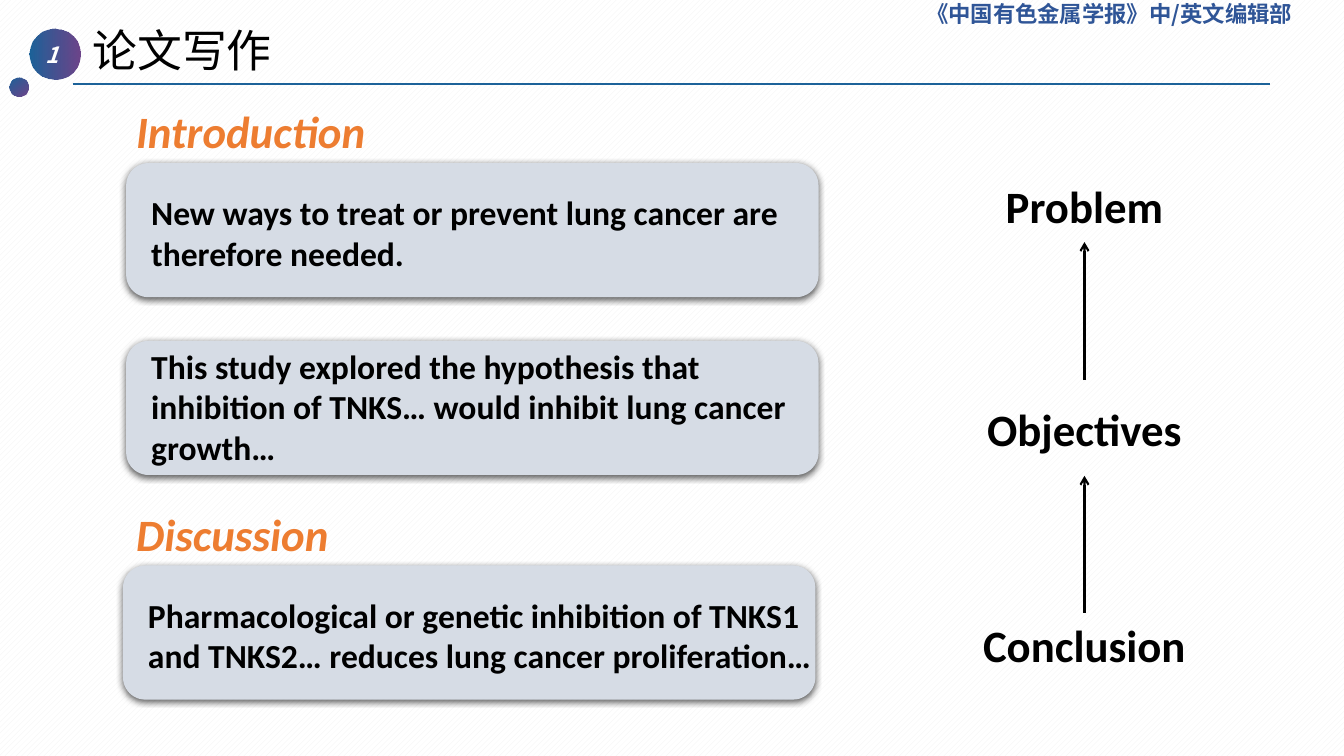
from dataclasses import dataclass

from lxml import etree
from pptx import Presentation
from pptx import util as u
from pptx.dml.color import RGBColor
from pptx.enum import dml, shapes, text
from pptx.oxml import ns, parse_xml


@dataclass(frozen=True)
class Theme:
    latin: str = "Calibri"
    cjk: str = "Noto Sans CJK SC"
    black: str = "000000"
    white: str = "FFFFFF"
    hatch: str = "F2F2F2"
    blue: str = "1C6299"
    purple: str = "5C307D"
    navy: str = "2F5597"
    orange: str = "ED7D31"
    card: str = "D6DCE5"
    large: int = 32
    body: int = 24
    small: int = 16


@dataclass(frozen=True)
class Box:
    left: float
    top: float
    width: float
    height: float

    def cm(self) -> tuple:
        return tuple(u.Cm(v) for v in (self.left, self.top, self.width, self.height))


@dataclass(frozen=True)
class Label:
    words: str
    box: Box
    size: int
    color: str
    font: str
    bold: bool = True
    italic: bool = False
    centered: bool = False


@dataclass(frozen=True)
class Card:
    words: str
    left: float
    top: float
    text_drop: float


@dataclass(frozen=True)
class Dot:
    left: float
    top: float
    size: float
    angle: int


@dataclass(frozen=True)
class Line:
    start: tuple[float, float]
    end: tuple[float, float]
    color: str
    width: float
    arrow: bool = False


T = Theme()
CARD_W, CARD_H = 17.45, 3.38
STAGE_X, STAGE_W = 27.33, 8
LABEL_H = 1.63

TITLE = Label("论文写作", Box(2.08, 0.46, 10, LABEL_H), T.large, T.black, T.cjk, bold=False)
NUMBER = Label("1", Box(0.38, 0.91, 1.88, 0.94), T.small, T.white, T.cjk,
               italic=True, centered=True)
JOURNAL = Label("《中国有色金属学报》中/英文编辑部", Box(23.09, -0.13, 10.7, 0.94),
                T.small, T.navy, T.cjk)
DOTS = [Dot(0.74, 0.71, 1.3, 0), Dot(0.25, 1.96, 0.48, 310)]
HEADINGS = [("Introduction", 2.49), ("Discussion", 12.65)]
CARDS = [
    Card("New ways to treat or prevent lung cancer are therefore needed.", 3.18, 4.11, 0.61),
    Card("This study explored the hypothesis that inhibition of TNKS… would inhibit "
         "lung cancer growth…", 3.18, 8.59, 0),
    Card("Pharmacological or genetic inhibition of TNKS1 and TNKS2… reduces lung cancer "
         "proliferation…", 3.1, 14.25, 0.61),
]
STAGES = [("Problem", 4.39), ("Objectives", 10.01), ("Conclusion", 15.44)]
LINES = [
    Line((1.83, 2.11), (32, 2.11), T.blue, 1.75),
    Line((STAGE_X, 15.44), (STAGE_X, 11.99), T.black, 1.5, arrow=True),
    Line((STAGE_X, 9.58), (STAGE_X, 6.1), T.black, 1.5, arrow=True),
]


def rgb(color: str) -> RGBColor:
    return RGBColor.from_string(color)


def add_label(parent, label: Label) -> None:
    tf = parent.add_textbox(*label.box.cm()).text_frame
    tf.word_wrap = True
    tf.auto_size = text.MSO_AUTO_SIZE.SHAPE_TO_FIT_TEXT
    p = tf.paragraphs[0]
    p.alignment = text.PP_ALIGN.CENTER if label.centered else text.PP_ALIGN.LEFT
    r = p.add_run()
    r.text = label.words
    f = r.font
    f.name, f.size = label.font, u.Pt(label.size)
    f.bold, f.italic = label.bold, label.italic
    f.color.rgb = rgb(label.color)
    ea = etree.SubElement(r._r.get_or_add_rPr(), ns.qn("a:ea"))
    ea.set("typeface", label.font)


def add_dot(parent, dot: Dot) -> None:
    box = Box(dot.left, dot.top, dot.size, dot.size)
    sp = parent.add_shape(shapes.MSO_SHAPE.OVAL, *box.cm())
    sp.shadow.inherit = False
    sp.line.fill.background()
    sp.fill.gradient()
    sp.fill.gradient_angle = dot.angle
    stops = sp.fill.gradient_stops
    for stop, position, color in zip(stops, (0, 1), (T.blue, T.purple)):
        stop.position = position
        stop.color.rgb = rgb(color)
    last_color = sp._element.spPr.findall(".//" + ns.qn("a:srgbClr"))[-1]
    etree.SubElement(last_color, ns.qn("a:alpha")).set("val", "90000")


def add_card(parent, card: Card) -> None:
    group = parent.add_group_shape().shapes
    box = Box(card.left, card.top, CARD_W, CARD_H)
    sp = group.add_shape(shapes.MSO_SHAPE.ROUNDED_RECTANGLE, *box.cm())
    sp.fill.solid()
    sp.fill.fore_color.rgb = rgb(T.card)
    sp.line.fill.background()
    sp._element.spPr.append(parse_xml(
        f'<a:effectLst {ns.nsdecls("a")}>'
        f'<a:outerShdw blurRad="{u.Pt(4.5)}" dist="{u.Pt(1.5)}" dir="5400000" '
        f'rotWithShape="0"><a:srgbClr val="{T.black}"><a:alpha val="63000"/>'
        '</a:srgbClr></a:outerShdw></a:effectLst>'))
    text_box = Box(card.left + 0.38, card.top + card.text_drop, 17.25, 2.31)
    add_label(group, Label(card.words, text_box, T.body, T.black, T.latin))


def add_line(parent, line: Line) -> None:
    ends = [u.Cm(v) for v in (*line.start, *line.end)]
    cx = parent.add_connector(shapes.MSO_CONNECTOR.STRAIGHT, *ends)
    cx.line.color.rgb = rgb(line.color)
    cx.line.width = u.Pt(line.width)
    if line.arrow:
        etree.SubElement(cx.line._get_or_add_ln(), ns.qn("a:tailEnd")).set("type", "arrow")
    etree.SubElement(cx._element.spPr, ns.qn("a:effectLst"))


def main() -> None:
    prs = Presentation()
    prs.slide_width, prs.slide_height = u.Cm(33.87), u.Cm(19.05)
    s = prs.slides.add_slide(prs.slide_layouts[6])
    fill = s.background.fill
    fill.patterned()
    fill.pattern = dml.MSO_PATTERN.WIDE_UPWARD_DIAGONAL
    fill.fore_color.rgb, fill.back_color.rgb = rgb(T.hatch), rgb(T.white)

    add_label(s.shapes, TITLE)
    badge = s.shapes.add_group_shape().shapes
    for dot in DOTS:
        add_dot(badge, dot)
    add_label(badge, NUMBER)
    add_label(s.shapes, JOURNAL)
    for words, top in HEADINGS:
        add_label(s.shapes, Label(words, Box(3.18, top, 9, LABEL_H),
                                  T.large, T.orange, T.latin, italic=True))
    for card in CARDS:
        add_card(s.shapes, card)
    for words, top in STAGES:
        add_label(s.shapes, Label(words, Box(STAGE_X - STAGE_W / 2, top, STAGE_W, LABEL_H),
                                  T.large, T.black, T.latin, centered=True))
    for line in LINES:
        add_line(s.shapes, line)
    prs.save("out.pptx")


if __name__ == "__main__":
    main()
